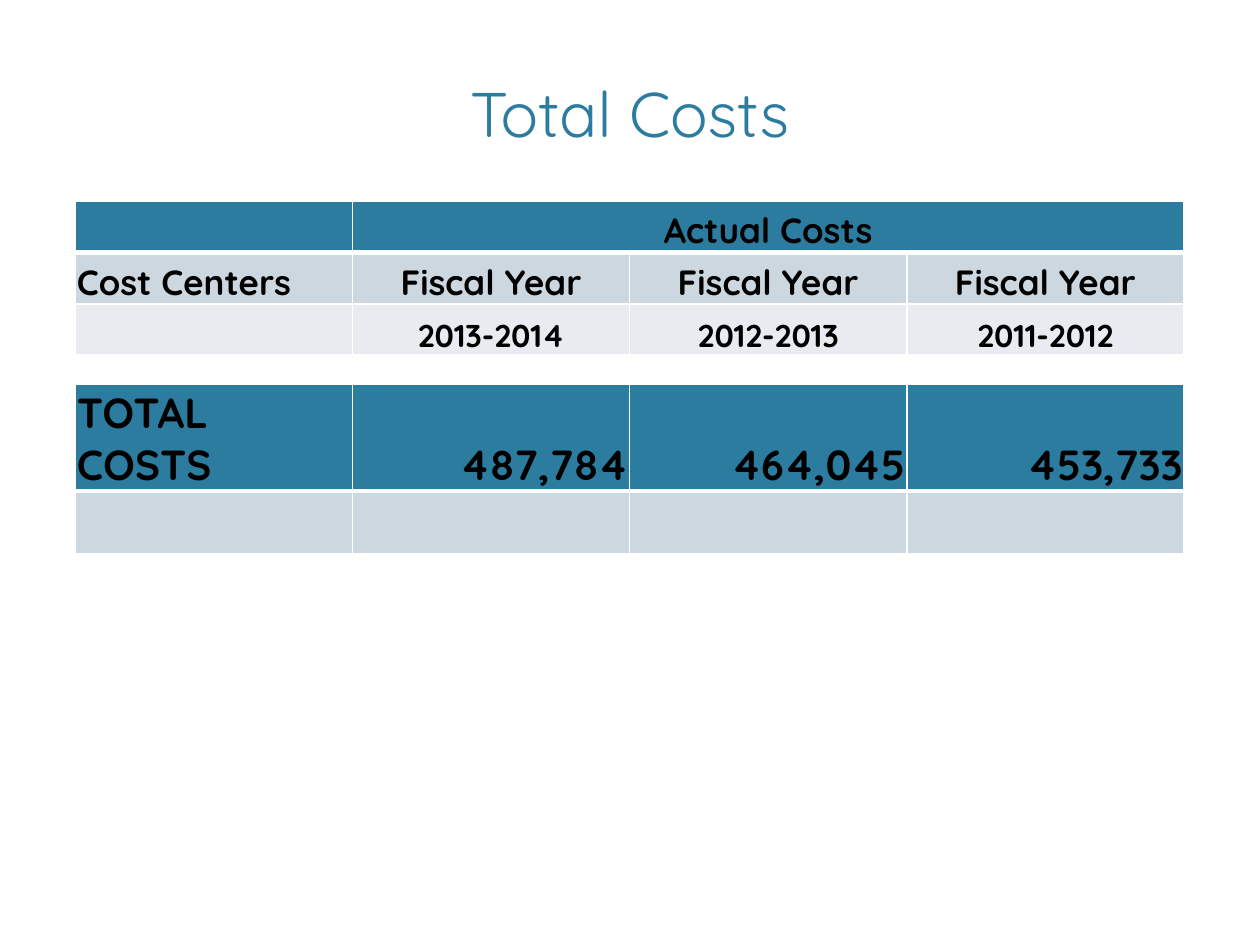
from dataclasses import dataclass

from lxml.etree import SubElement
from pptx import Presentation
from pptx.dml.color import RGBColor
from pptx.enum.text import MSO_ANCHOR, PP_ALIGN
from pptx.oxml.ns import qn
from pptx.util import Cm, Pt


@dataclass(frozen=True)
class Theme:
    """Colours, font and type sizes of the slide."""
    font: str = "Quicksand"
    accent: str = "2C7C9F"
    band: str = "CDD7DF"
    light_band: str = "E8ECF0"
    text: str = "000000"
    border: str = "FFFFFF"
    title_size: int = 36
    total_size: int = 24
    heading_size: int = 20
    year_size: int = 18
    thin_line: int = 1
    thick_line: int = 3


THEME = Theme()


def format_text(text_frame, size, color, alignment, bold):
    """Apply one type style to all text in a frame."""
    for paragraph in text_frame.paragraphs:
        paragraph.alignment = alignment
        for run in paragraph.runs:
            run.font.name = THEME.font
            run.font.size = Pt(size)
            run.font.bold = bold
            run.font.color.rgb = RGBColor.from_string(color)


def set_borders(cell, row_index):
    """Draw thin cell borders, with a thick rule under the first row."""
    thick_side = {0: "lnB", 1: "lnT"}.get(row_index)
    properties = cell._tc.get_or_add_tcPr()
    for position, side in enumerate(("lnL", "lnR", "lnT", "lnB")):
        width = THEME.thick_line if side == thick_side else THEME.thin_line
        line = SubElement(properties, qn(f"a:{side}"), w=str(Pt(width)))
        fill = SubElement(line, qn("a:solidFill"))
        SubElement(fill, qn("a:srgbClr"), val=THEME.border)
        properties.insert(position, line)


def format_cell(cell, text, size, fill, alignment):
    """Fill one table cell with its text and colour."""
    cell.fill.solid()
    cell.fill.fore_color.rgb = RGBColor.from_string(fill)
    cell.vertical_anchor = MSO_ANCHOR.BOTTOM
    cell.margin_left = cell.margin_right = cell.margin_top = Cm(0.03)
    cell.margin_bottom = 0
    if text:
        cell.text_frame.text = text
        format_text(cell.text_frame, size, THEME.text, alignment, True)


def add_cost_table(slide, box, rows, row_heights, alignment):
    """Place a table of (texts, size, fill) rows in a box and return it."""
    shape = slide.shapes.add_table(len(rows), len(rows[0][0]), *box)
    table = shape.table
    for row_index, (texts, size, fill) in enumerate(rows):
        table.rows[row_index].height = row_heights[row_index]
        for column_index, text in enumerate(texts):
            cell = table.cell(row_index, column_index)
            cell_alignment = alignment if column_index else PP_ALIGN.LEFT
            format_cell(cell, text, size, fill, cell_alignment)
            set_borders(cell, row_index)
    return table


def add_title(slide, box):
    """Place the slide title in a box."""
    title = slide.shapes.title
    title.left, title.top, title.width, title.height = box
    title.text_frame.text = "Total Costs"
    title.text_frame.vertical_anchor = MSO_ANCHOR.BOTTOM
    format_text(title.text_frame, THEME.title_size, THEME.accent, PP_ALIGN.CENTER, False)


def add_heading_table(slide, box):
    """Place the table of column headings in a box."""
    rows = [
        (("", "Actual Costs", "", ""), THEME.heading_size, THEME.accent),
        (("Cost Centers",) + ("Fiscal Year",) * 3, THEME.heading_size, THEME.band),
        (("", "2013-2014", "2012-2013", "2011-2012"), THEME.year_size, THEME.light_band),
    ]
    row_heights = [box[3] // len(rows)] * len(rows)
    table = add_cost_table(slide, box, rows, row_heights, PP_ALIGN.CENTER)
    table.cell(0, 1).merge(table.cell(0, 3))


def add_total_table(slide, box):
    """Place the table of total costs in a box."""
    rows = [
        (("TOTAL COSTS", "487,784", "464,045", "453,733"), THEME.total_size, THEME.accent),
        (("",) * 4, THEME.total_size, THEME.band),
    ]
    total_height = Cm(2.13)
    row_heights = [total_height, box[3] - total_height]
    table = add_cost_table(slide, box, rows, row_heights, PP_ALIGN.RIGHT)
    table.cell(0, 0).margin_right = Cm(0.3)


def main():
    """Build and save the presentation."""
    presentation = Presentation()
    presentation.slide_width, presentation.slide_height = Cm(25.4), Cm(19.05)
    slide = presentation.slides.add_slide(presentation.slide_layouts[5])
    left, width = Cm(1.52), Cm(22.35)
    add_title(slide, (left, Cm(1.45), width, Cm(1.7)))
    add_total_table(slide, (left, Cm(7.75), width, Cm(3.4)))
    add_heading_table(slide, (left, Cm(4.06), width, Cm(3.1)))
    presentation.save("out.pptx")


if __name__ == "__main__":
    main()
